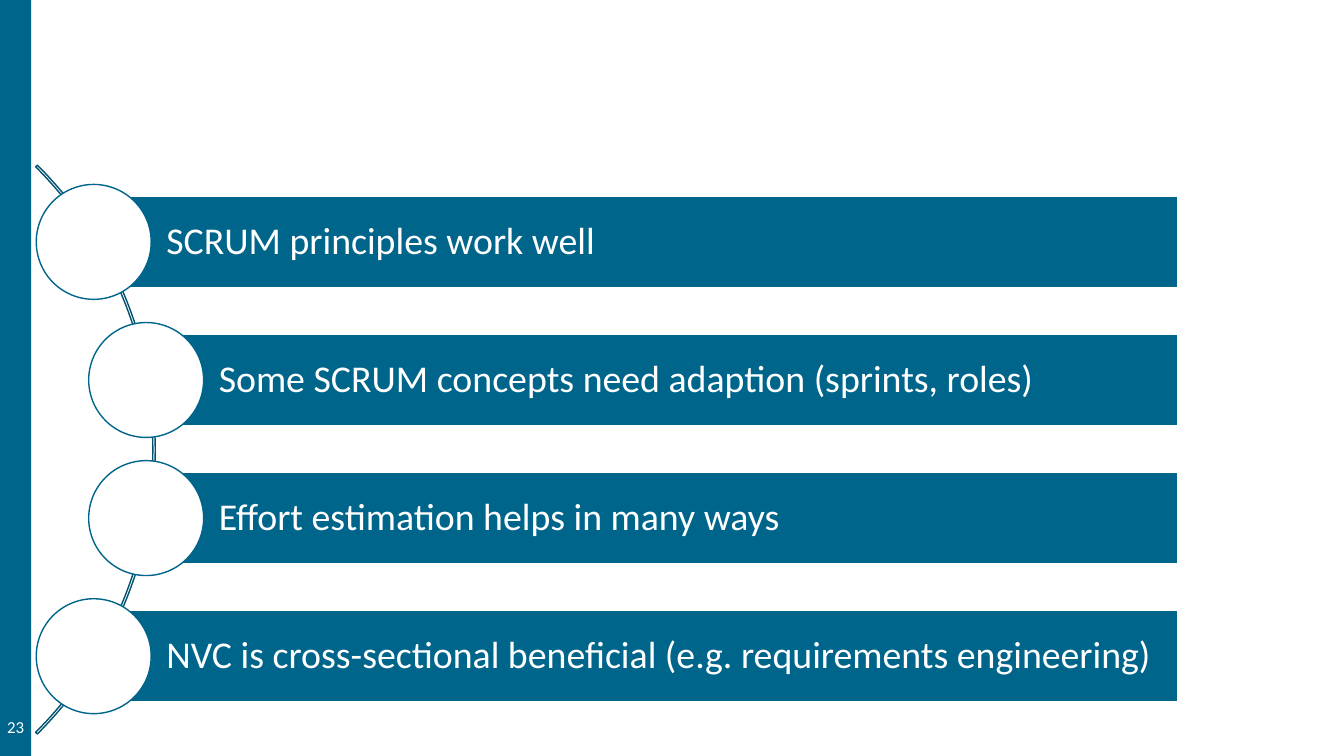
from pptx import Presentation
from pptx.dml.color import RGBColor
from pptx.enum.shapes import MSO_SHAPE as Shape
from pptx.enum.text import MSO_ANCHOR as Anchor, PP_ALIGN as Align
from pptx.util import Inches, Pt

COLOURS = {"teal": "00658B", "arc": "00516F", "white": "FFFFFF"}
FONT = "Calibri"
LESSONS = [
    (0.36, "SCRUM principles work well"),
    (0.88, "Some SCRUM concepts need adaption (sprints, roles)"),
    (0.88, "Effort estimation helps in many ways"),
    (0.36, "NVC is cross-sectional beneficial (e.g. requirements engineering)"),
]
FIRST_TOP, PITCH = 1.83, 1.37
DIAMETER, BAR_HEIGHT, BAR_RIGHT = 1.14, 0.91, 11.68


def colour(name):
    """Return the named colour."""
    return RGBColor.from_string(COLOURS[name])


def add_figure(page, kind, left, top, width, height, fill=None, line=None):
    """Add a flat preset shape with an optional fill and outline."""
    figure = page.shapes.add_shape(
        kind, Inches(left), Inches(top), Inches(width), Inches(height))
    figure.shadow.inherit = False
    if fill:
        figure.fill.solid()
        figure.fill.fore_color.rgb = colour(fill)
    else:
        figure.fill.background()
    if line:
        figure.line.color.rgb = colour(line)
        figure.line.width = Pt(1)
    else:
        figure.line.fill.background()
    return figure


def write_text(shape, text, size, align, anchor, insets, wrap=True):
    """Write one white paragraph into a shape and return it."""
    frame = shape.text_frame
    frame.word_wrap = wrap
    frame.vertical_anchor = anchor
    (frame.margin_left, frame.margin_top,
     frame.margin_right, frame.margin_bottom) = map(Inches, insets)
    para = frame.paragraphs[0]
    para.text = text
    para.alignment = align
    para.font.name = FONT
    para.font.size = Pt(size)
    para.font.color.rgb = colour("white")
    return para


def add_side_band(page, number):
    """Add the left band with the slide number."""
    add_figure(page, Shape.RECTANGLE, 0, 0, 0.31, 7.5, "teal")
    box = page.shapes.add_textbox(
        Inches(0), Inches(5.84), Inches(0.31), Inches(1.57))
    write_text(box, number, 12, Align.CENTER, Anchor.BOTTOM,
               (0.04, 0.1, 0.04, 0.1), wrap=False)


def add_arc(page):
    """Add the thin arc that runs behind the circles."""
    arc = add_figure(page, Shape.BLOCK_ARC, -6.44, 0.47, 7.98, 7.98, line="arc")
    for index, value in enumerate((189, 27, 0.003)):
        arc.adjustments[index] = value


def add_lesson(page, left, top, text):
    """Add a text bar with a circle over its left end."""
    bar_left = left + DIAMETER / 2
    bar_top = top + (DIAMETER - BAR_HEIGHT) / 2
    bar = add_figure(page, Shape.RECTANGLE, bar_left, bar_top,
                     BAR_RIGHT - bar_left, BAR_HEIGHT, "teal", "white")
    para = write_text(bar, text, 27, Align.LEFT, Anchor.MIDDLE,
                      (0.72, 0.07, 0.07, 0.07))
    para.line_spacing = 0.9
    add_figure(page, Shape.OVAL, left, top, DIAMETER, DIAMETER, "white", "teal")


def main():
    """Build the slide and save the deck."""
    deck = Presentation()
    deck.slide_width, deck.slide_height = Inches(13.33), Inches(7.5)
    page = deck.slides.add_slide(deck.slide_layouts[6])
    add_side_band(page, "23")
    add_arc(page)
    for row, (left, text) in enumerate(LESSONS):
        add_lesson(page, left, FIRST_TOP + row * PITCH, text)
    deck.save("out.pptx")


if __name__ == "__main__":
    main()
